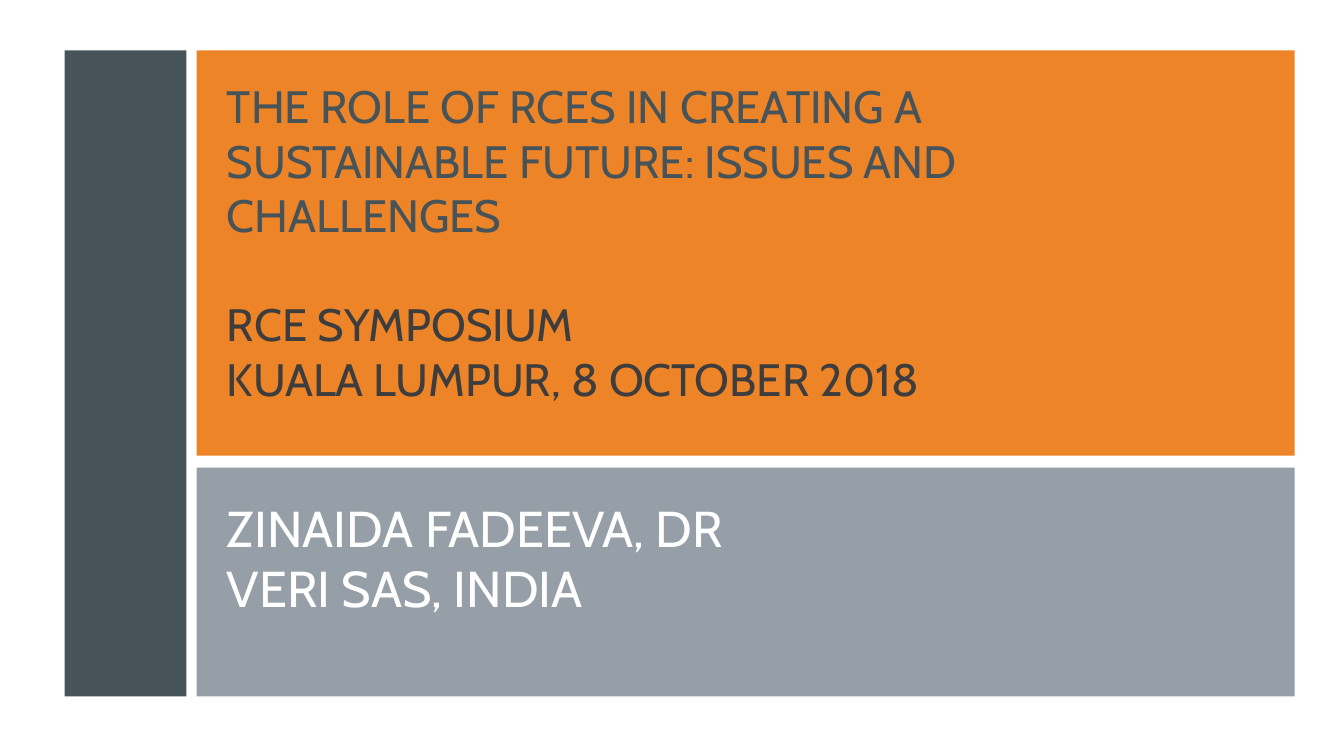
from pptx import Presentation
from pptx.dml.color import RGBColor
from pptx.enum.shapes import MSO_SHAPE
from pptx.enum.text import MSO_ANCHOR, MSO_AUTO_SIZE, PP_ALIGN
from pptx.util import Inches, Pt


def color(value):
    return RGBColor.from_string(value)


deck = Presentation()
deck.slide_width, deck.slide_height = Inches(13.33), Inches(7.5)
slide = deck.slides.add_slide(deck.slide_layouts[0])

top, bottom = 0.5, 6.91
bar_left, bar_width = 0.64, 1.21
panel_left, panel_width = 1.95, 10.89
title_height, gap = 4.02, 0.12
author_top = top + title_height + gap
text_left, text_width = panel_left + 0.2, 8.28

panels = [
    (panel_left, top, panel_width, title_height, "ED8428"),
    (bar_left, top, bar_width, bottom - top, "465359"),
    (panel_left, author_top, panel_width, bottom - author_top, "969FA7"),
]
for *bounds, fill in panels:
    panel = slide.shapes.add_shape(MSO_SHAPE.RECTANGLE, *map(Inches, bounds))
    panel.shadow.inherit = False
    panel.fill.solid()
    panel.fill.fore_color.rgb = color(fill)
    panel.line.fill.background()

topic = "THE ROLE OF RCES IN CREATING A SUSTAINABLE FUTURE: ISSUES AND CHALLENGES"
event = "RCE SYMPOSIUM\vKUALA LUMPUR, 8 OCTOBER 2018"
author = "ZINAIDA FADEEVA, DR\vVERI SAS, INDIA"

texts = [
    (slide.shapes.title, top + 0.23, 3.64, 32.4,
     [(topic, "465359", 0), (event, "3D3D3D", 39)]),
    (slide.placeholders[1], author_top + 0.24, 1.79, 36,
     [(author, "FFFFFF", 0)]),
]
for holder, text_top, text_height, size, paragraphs in texts:
    holder.left, holder.top = Inches(text_left), Inches(text_top)
    holder.width, holder.height = Inches(text_width), Inches(text_height)
    frame = holder.text_frame
    frame.word_wrap = True
    frame.auto_size = MSO_AUTO_SIZE.NONE
    frame.vertical_anchor = MSO_ANCHOR.TOP
    frame.text = "\n".join(words for words, _, _ in paragraphs)
    for paragraph, (_, ink, space) in zip(frame.paragraphs, paragraphs):
        paragraph.alignment = PP_ALIGN.LEFT
        paragraph.space_before = Pt(space)
        paragraph.font.name = "Cabin"
        paragraph.font.size = Pt(size)
        paragraph.font.color.rgb = color(ink)
    slide.shapes._spTree.append(holder._element)

deck.save("out.pptx")
